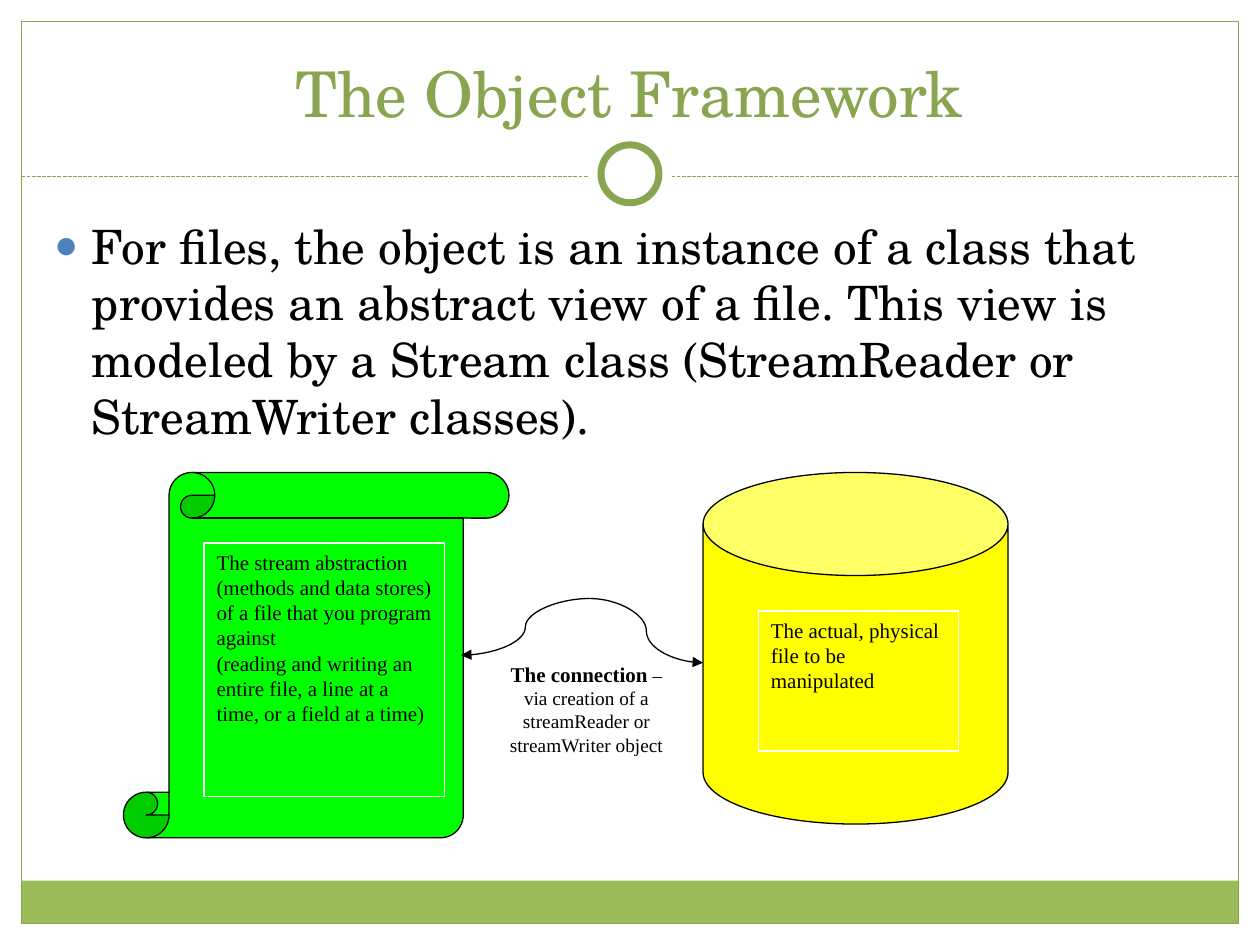
from lxml import etree
from pptx import Presentation
from pptx.dml.color import RGBColor
from pptx.enum.dml import MSO_LINE
from pptx.enum.shapes import MSO_CONNECTOR as Connector, MSO_SHAPE as Preset
from pptx.enum.text import MSO_ANCHOR as Anchor, MSO_AUTO_SIZE as AutoSize, PP_ALIGN as Align
from pptx.oxml.ns import qn
from pptx.util import Inches, Pt

WHITE = RGBColor(0xFF, 0xFF, 0xFF)
BLACK = RGBColor(0x00, 0x00, 0x00)
BAND_GREEN = RGBColor(0x9B, 0xBB, 0x59)
FRAME_GREEN = RGBColor(0x89, 0xA5, 0x4F)
BULLET_BLUE = RGBColor(0x4F, 0x81, 0xBD)
SCROLL_GREEN = RGBColor(0x00, 0xFF, 0x00)
DISK_YELLOW = RGBColor(0xFF, 0xFF, 0x00)
HEADING_FONT = "TeX Gyre Schola"
LABEL_FONT = "Times New Roman"


def add_box(slide, preset, box, fill=None, line=None, width=0.75):
    """Add a preset shape at box (left, top, width, height in inches)."""
    shape = slide.shapes.add_shape(preset, *map(Inches, box))
    shape.shadow.inherit = False
    if fill is None:
        shape.fill.background()
    else:
        shape.fill.solid()
        shape.fill.fore_color.rgb = fill
    if line is None:
        shape.line.fill.background()
    else:
        shape.line.color.rgb = line
        shape.line.width = Pt(width)
    return shape


def add_line(slide, kind, start, end, color):
    """Add a thin connector between two points in inches."""
    connector = slide.shapes.add_connector(kind, *map(Inches, start + end))
    connector.line.color.rgb = color
    connector.line.width = Pt(0.75)
    etree.SubElement(connector.element.spPr, qn("a:effectLst"))
    return connector


def add_text(paragraph, text, size=12, font=LABEL_FONT, color=BLACK, bold=False):
    """Append a formatted run to a paragraph."""
    run = paragraph.add_run()
    run.text = text
    run.font.size = Pt(size)
    run.font.name = font
    run.font.color.rgb = color
    run.font.bold = bold


def add_label(slide, box, fill, paragraphs, align=Align.LEFT):
    """Add a white-edged label; each paragraph is a list of (text, format) runs."""
    frame = add_box(slide, Preset.RECTANGLE, box, fill, WHITE).text_frame
    frame.word_wrap = True
    frame.vertical_anchor = Anchor.TOP
    for index, runs in enumerate(paragraphs):
        paragraph = frame.add_paragraph() if index else frame.paragraphs[0]
        paragraph.alignment = align
        for text, text_format in runs:
            add_text(paragraph, text, **text_format)


def add_frame(slide, box):
    """Draw the border, bottom band, dashed divider and ring."""
    left, top, width, height = box
    right, middle, divider, band = left + width, left + width / 2, 1.4, 0.34
    add_box(slide, Preset.RECTANGLE, (left, top + height - band, width, band), BAND_GREEN)
    add_box(slide, Preset.RECTANGLE, box, line=FRAME_GREEN)
    dashed = add_line(slide, Connector.STRAIGHT, (left, divider), (right, divider), FRAME_GREEN)
    dashed.line.dash_style = MSO_LINE.SQUARE_DOT
    for size, line in ((0.67, None), (0.46, FRAME_GREEN)):
        ring = (middle - size / 2, 1.38 - size / 2, size, size)
        add_box(slide, Preset.OVAL, ring, WHITE, line, 4)


def place_placeholder(placeholder, box, anchor):
    """Move a placeholder to box, in front of the frame, and return its first paragraph."""
    placeholder.left, placeholder.top, placeholder.width, placeholder.height = map(Inches, box)
    placeholder.element.getparent().append(placeholder.element)
    frame = placeholder.text_frame
    frame.word_wrap = True
    frame.auto_size = AutoSize.NONE
    frame.vertical_anchor = anchor
    return frame.paragraphs[0]


def add_title(slide, box):
    """Fill the title placeholder."""
    paragraph = place_placeholder(slide.shapes.title, box, Anchor.BOTTOM)
    paragraph.alignment = Align.CENTER
    add_text(paragraph, "The Object Framework", size=36, font=HEADING_FONT, color=FRAME_GREEN)


def add_body(slide, box):
    """Fill the body placeholder with one bulleted paragraph."""
    paragraph = place_placeholder(slide.placeholders[1], box, Anchor.TOP)
    properties = paragraph._p.get_or_add_pPr()
    properties.set("marL", str(Inches(0.3)))
    properties.set("indent", str(-Inches(0.3)))
    bullet_color = etree.SubElement(properties, qn("a:buClr"))
    etree.SubElement(bullet_color, qn("a:srgbClr"), val=str(BULLET_BLUE))
    etree.SubElement(properties, qn("a:buSzPct"), val="85000")
    etree.SubElement(properties, qn("a:buChar"), char="●")
    paragraph.space_before = Pt(0)
    add_text(
        paragraph,
        "For files, the object is an instance of a class that provides an abstract view "
        "of a file. This view is modeled by a Stream class (StreamReader or StreamWriter "
        "classes).",
        size=27, font=HEADING_FONT,
    )


def add_diagram(slide, box):
    """Draw the stream scroll, the file cylinder and the connection between them."""
    left, top, width, height = box
    disk_left = left + width - 2.42
    disk = add_box(slide, Preset.CAN, (disk_left, top, 2.42, 2.79), DISK_YELLOW, BLACK)
    disk.adjustments[0] = 0.338
    scroll_box = (left, top, 3.06, height)
    scroll = add_box(slide, Preset.VERTICAL_SCROLL, scroll_box, SCROLL_GREEN, BLACK)
    scroll.adjustments[0] = 0.125

    add_label(slide, (left + 2.94, top + 1.45, 1.47, 0.99), WHITE, [[
        ("The connection", {"bold": True}),
        (" – via creation of a streamReader or streamWriter object", {"size": 11}),
    ]], Align.CENTER)
    add_label(slide, (left + 0.64, top + 0.56, 1.91, 2.01), SCROLL_GREEN, [
        [("The stream abstraction (methods and data stores) of a file that you program "
          "against", {})],
        [("(reading and writing an entire file, a line at a time, or a field at a time)", {})],
    ])
    add_label(slide, (disk_left + 0.44, top + 1.1, 1.59, 1.11), DISK_YELLOW,
              [[("The actual, physical file to be manipulated", {})]])

    peak = (left + 3.7, top + 1)
    for end in ((left + 2.68, top + 1.45), (disk_left, top + 1.51)):
        curve = add_line(slide, Connector.CURVE, peak, end, BLACK)
        etree.SubElement(curve.line._get_or_add_ln(), qn("a:tailEnd"), type="triangle")


def main():
    """Build and save the slide."""
    presentation = Presentation()
    presentation.slide_width = Inches(10)
    presentation.slide_height = Inches(7.5)
    slide = presentation.slides.add_slide(presentation.slide_layouts[1])
    add_frame(slide, (0.17, 0.17, 9.66, 7.16))
    add_title(slide, (0.33, 0.25, 9.33, 0.83))
    add_body(slide, (0.33, 1.67, 9.3, 5))
    add_diagram(slide, (0.98, 3.75, 7.02, 2.9))
    presentation.save("out.pptx")


if __name__ == "__main__":
    main()
